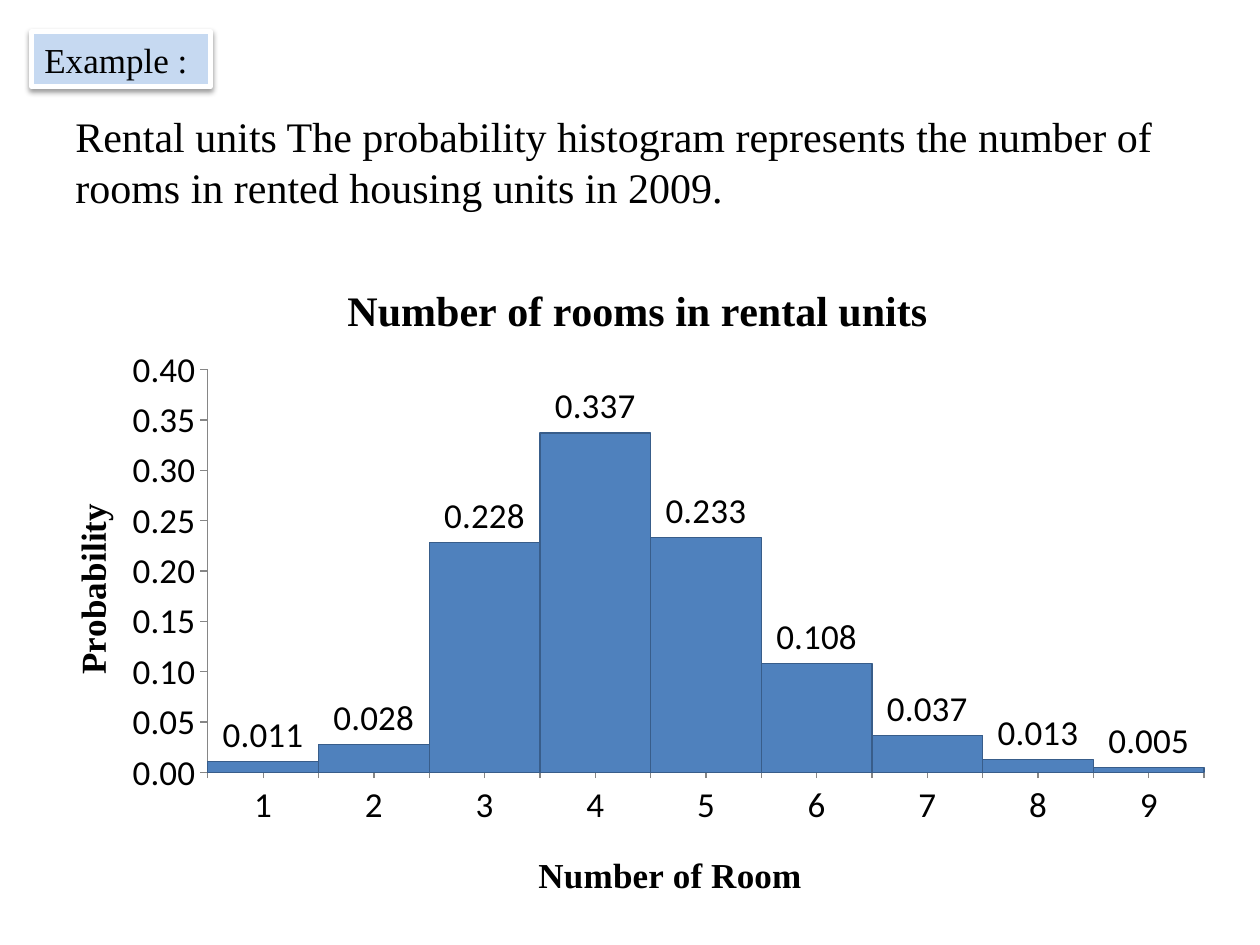
import pptx
import pptx.chart.data
import pptx.dml.color
import pptx.enum.chart
import pptx.enum.text
import pptx.oxml
import pptx.oxml.ns
import pptx.util
from dataclasses import dataclass
from pptx.util import Cm, Pt


@dataclass(frozen=True)
class Theme:
    serif: str = "Times New Roman"
    sans: str = "Calibri"
    ink: str = "000000"
    white: str = "FFFFFF"
    tag: str = "C6D9F1"
    bar: str = "4F81BD"
    edge: str = "385D8A"
    axis: str = "868686"
    small: int = 20
    large: int = 24


THEME = Theme()
ROOMS = range(1, 10)
PROBS = (0.011, 0.028, 0.228, 0.337, 0.233, 0.108, 0.037, 0.013, 0.005)


def rgb(code):
    return pptx.dml.color.RGBColor.from_string(code)


def style(font, size=THEME.small, face=THEME.sans, bold=False):
    font.size, font.name, font.bold = Pt(size), face, bold
    font.color.rgb = rgb(THEME.ink)


def write(frame, text, **form):
    """Put one left-aligned or centred line of text in a frame."""
    para = frame.paragraphs[0]
    align = form.pop("align", None)
    if align is not None:
        para.alignment = align
    run = para.add_run()
    run.text = text
    style(run.font, **{"face": THEME.serif, **form})


def place(shape, left, top, width, height):
    shape.left, shape.top = Cm(left), Cm(top)
    shape.width, shape.height = Cm(width), Cm(height)


def add_tag(slide, text):
    tag = slide.shapes.title
    place(tag, 0.64, 0.64, 3.6, 1.11)
    tag.fill.solid()
    tag.fill.fore_color.rgb = rgb(THEME.tag)
    tag.line.color.rgb = rgb(THEME.white)
    tag.line.width = Pt(3)
    # Soft shadow straight below the tag
    tag.shadow.inherit = False
    glow = tag.element.spPr.find(pptx.oxml.ns.qn("a:effectLst"))
    glow.append(pptx.oxml.parse_xml(
        f'<a:outerShdw {pptx.oxml.ns.nsdecls("a")} blurRad="{Pt(3.1)}" '
        f'dist="{Pt(1.6)}" dir="5400000" rotWithShape="0">'
        f'<a:srgbClr val="{THEME.ink}"><a:alpha val="38000"/></a:srgbClr>'
        '</a:outerShdw>'))
    tag.text_frame.auto_size = pptx.enum.text.MSO_AUTO_SIZE.NONE
    write(tag.text_frame, text, align=pptx.enum.text.PP_ALIGN.LEFT)


def add_note(slide, text):
    box = slide.shapes.add_textbox(Cm(1.27), Cm(2.11), Cm(23.5), Cm(2.31))
    box.text_frame.word_wrap = True
    write(box.text_frame, text, size=THEME.large)


def lay_out(part, after=None, inner=False, **spots):
    """Fix a chart part at fractions of the chart area."""
    for old in part.findall(pptx.oxml.ns.qn("c:layout")):
        part.remove(old)
    mode = '<c:layoutTarget val="inner"/>' if inner else ""
    mode += '<c:xMode val="edge"/><c:yMode val="edge"/>'
    vals = "".join(f'<c:{key} val="{val}"/>' for key, val in spots.items())
    node = pptx.oxml.parse_xml(
        f'<c:layout {pptx.oxml.ns.nsdecls("c")}><c:manualLayout>'
        f'{mode}{vals}</c:manualLayout></c:layout>')
    if after:
        part.find(pptx.oxml.ns.qn(after)).addnext(node)
    else:
        part.insert(0, node)


def add_head(title, text, x, y, **form):
    write(title.text_frame, text, bold=True, **form)
    lay_out(title.element, after="c:tx", x=x, y=y)


def set_axis(axis, major, minor):
    axis.has_major_gridlines = False
    axis.major_tick_mark, axis.minor_tick_mark = major, minor
    axis.format.line.color.rgb = rgb(THEME.axis)
    style(axis.tick_labels.font)


def add_bars(slide):
    enums = pptx.enum.chart
    data = pptx.chart.data.CategoryChartData()
    data.categories = [str(room) for room in ROOMS]
    data.add_series("Series 1", PROBS)
    chart = slide.shapes.add_chart(
        enums.XL_CHART_TYPE.COLUMN_CLUSTERED,
        Cm(0.56), Cm(4.88), Cm(24.2), Cm(13.54), data).chart
    style(chart.font, size=10)
    chart.has_legend = False

    # Touching bars with their values on top
    plot = chart.plots[0]
    plot.gap_width = 0
    plot.vary_by_categories = False
    bars = plot.series[0].format
    bars.fill.solid()
    bars.fill.fore_color.rgb = rgb(THEME.bar)
    bars.line.color.rgb = rgb(THEME.edge)
    bars.line.width = Pt(0.75)
    plot.has_data_labels = True
    labels = plot.data_labels
    labels.show_value = True
    labels.number_format, labels.number_format_is_linked = "0.000", False
    labels.position = enums.XL_LABEL_POSITION.OUTSIDE_END
    style(labels.font)

    # Axes
    ticks = enums.XL_TICK_MARK
    rooms, probs = chart.category_axis, chart.value_axis
    set_axis(rooms, ticks.NONE, ticks.OUTSIDE)
    set_axis(probs, ticks.OUTSIDE, ticks.NONE)
    probs.minimum_scale, probs.maximum_scale = 0, 0.4
    probs.major_unit = 0.05
    probs.tick_labels.number_format = "0.00"
    probs.tick_labels.number_format_is_linked = False

    # Headings and plot position
    chart.has_title = True
    add_head(chart.chart_title, "Number of rooms in rental units",
             0.26, 0.05, size=THEME.large)
    add_head(rooms.axis_title, "Number of Room", 0.42, 0.9)
    add_head(probs.axis_title, "Probability", 0.03, 0.38)
    area = chart.element.find(".//" + pptx.oxml.ns.qn("c:plotArea"))
    lay_out(area, inner=True, x=0.15, y=0.19, w=0.83, h=0.6)


def main():
    deck = pptx.Presentation()
    deck.slide_width, deck.slide_height = Cm(25.4), Cm(19.05)
    slide = deck.slides.add_slide(deck.slide_layouts.get_by_name("Title Only"))
    add_tag(slide, "Example :")
    add_note(slide, "Rental units The probability histogram represents the "
                    "number of rooms in rented housing units in 2009.")
    add_bars(slide)
    deck.save("out.pptx")


if __name__ == "__main__":
    main()
